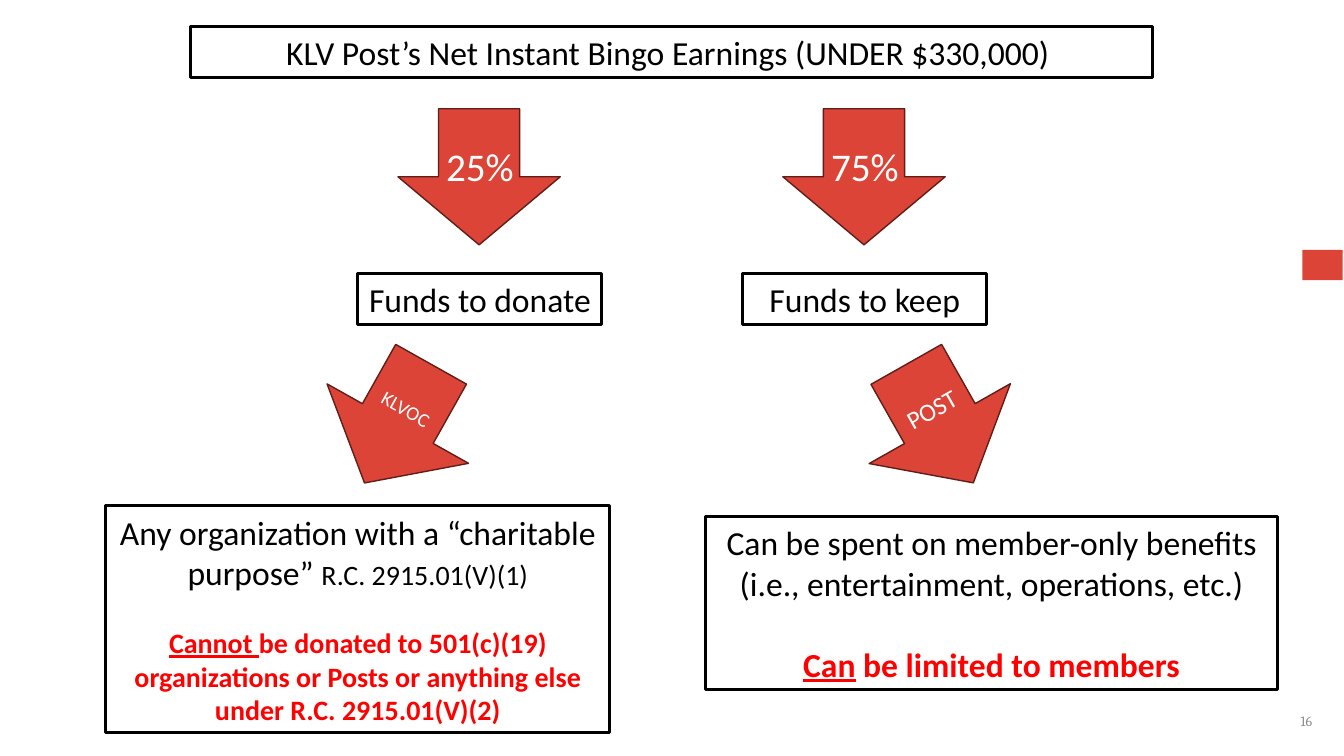
import pptx
import pptx.util
import pptx.dml.color
import pptx.enum.shapes
import pptx.enum.text

Cm = pptx.util.Cm
Pt = pptx.util.Pt
SHAPES = pptx.enum.shapes.MSO_SHAPE
ALIGN = pptx.enum.text.PP_ALIGN
COLORS = {
    "black": "000000",
    "white": "FFFFFF",
    "red": "DC4438",
    "dark red": "601E19",
    "warning": "FF0000",
    "gray": "8C8C8C",
}


def write(shape, text, size=24, color="black", font="Calibri", bold=False,
          underline=False, align=ALIGN.CENTER, new=False, before=0):
    frame = shape.text_frame
    frame.word_wrap = True
    frame.auto_size = pptx.enum.text.MSO_AUTO_SIZE.NONE
    frame.vertical_anchor = pptx.enum.text.MSO_ANCHOR.MIDDLE
    paragraph = frame.add_paragraph() if new else frame.paragraphs[-1]
    paragraph.alignment = align
    if before:
        paragraph.space_before = Pt(before)
    run = paragraph.add_run()
    run.text = text
    run.font.name = font
    run.font.size = Pt(size)
    run.font.bold = bold
    run.font.underline = underline
    run.font.color.rgb = pptx.dml.color.RGBColor.from_string(COLORS[color])


def add_shape(kind, left, top, width, height, fill=None, line=None, weight=1):
    shape = slide.shapes.add_shape(kind, Cm(left), Cm(top), Cm(width), Cm(height))
    shape.shadow.inherit = False
    if fill:
        shape.fill.solid()
        shape.fill.fore_color.rgb = pptx.dml.color.RGBColor.from_string(COLORS[fill])
    else:
        shape.fill.background()
    if line:
        shape.line.color.rgb = pptx.dml.color.RGBColor.from_string(COLORS[line])
        shape.line.width = Pt(weight)
    else:
        shape.line.fill.background()
    return shape


presentation = pptx.Presentation()
presentation.slide_width = Cm(33.87)
presentation.slide_height = Cm(19.05)
slide = presentation.slides.add_slide(presentation.slide_layouts[5])

add_shape(SHAPES.RECTANGLE, 32.82, 6.3, 1.02, 0.76, fill="red")

page_number = slide.shapes.add_textbox(Cm(25.7), Cm(17.65), Cm(7.62), Cm(1.02))
write(page_number, "16", size=10, color="gray", font="Cambria", align=ALIGN.RIGHT)

title = slide.shapes.title
title.left, title.top, title.width, title.height = Cm(4.81), Cm(0.67), Cm(24.23), Cm(1.28)
title.line.color.rgb = pptx.dml.color.RGBColor.from_string(COLORS["black"])
title.line.width = Pt(2.25)
write(title, "KLV Post’s Net Instant Bingo Earnings (UNDER $330,000) ")

branches = [
    ("25%", "Funds to donate", "KLVOC", 14, 7.98, 29.3),
    ("75%", "Funds to keep", "POST", 18, 21.64, 330.5),
]
for index, (share, funds, holder, holder_size, holder_left, angle) in enumerate(branches):
    offset = index * 9.7
    add_shape(SHAPES.DOWN_ARROW, 10.03 + offset, 2.74, 4.09, 3.43,
              fill="red", line="dark red")
    share_label = slide.shapes.add_textbox(Cm(10.19 + offset), Cm(3.45), Cm(3.81), Cm(1.45))
    write(share_label, share, size=28, color="white")

    funds_box = add_shape(SHAPES.RECTANGLE, 9.02 + offset, 6.89, 6.15, 1.28,
                          line="black", weight=2.25)
    write(funds_box, funds)

    holder_arrow = add_shape(SHAPES.DOWN_ARROW, holder_left, 8.96, 4.09, 3.43,
                             fill="red", line="dark red")
    holder_arrow.rotation = angle
    write(holder_arrow, holder, size=holder_size, color="white")

donate_box = add_shape(SHAPES.RECTANGLE, 2.67, 12.73, 12.7, 5.74, line="black", weight=2.25)
write(donate_box, "Any organization with a “charitable purpose” ")
write(donate_box, "R.C. 2915.01(V)(1)", size=20)
write(donate_box, "Cannot ", size=20, color="warning", bold=True, underline=True,
      new=True, before=24)
write(donate_box, "be donated to 501(c)(19) organizations or Posts or anything else "
      "under R.C. 2915.01(V)(2)", size=20, color="warning", bold=True)

keep_box = add_shape(SHAPES.RECTANGLE, 17.79, 13.01, 14.4, 4.37, line="black", weight=2.25)
write(keep_box, "Can be spent on member-only benefits")
write(keep_box, "(i.e., entertainment, operations, etc.)", new=True)
write(keep_box, "Can", color="warning", bold=True, underline=True, new=True, before=29)
write(keep_box, " be limited to members", color="warning", bold=True)

presentation.save("out.pptx")
